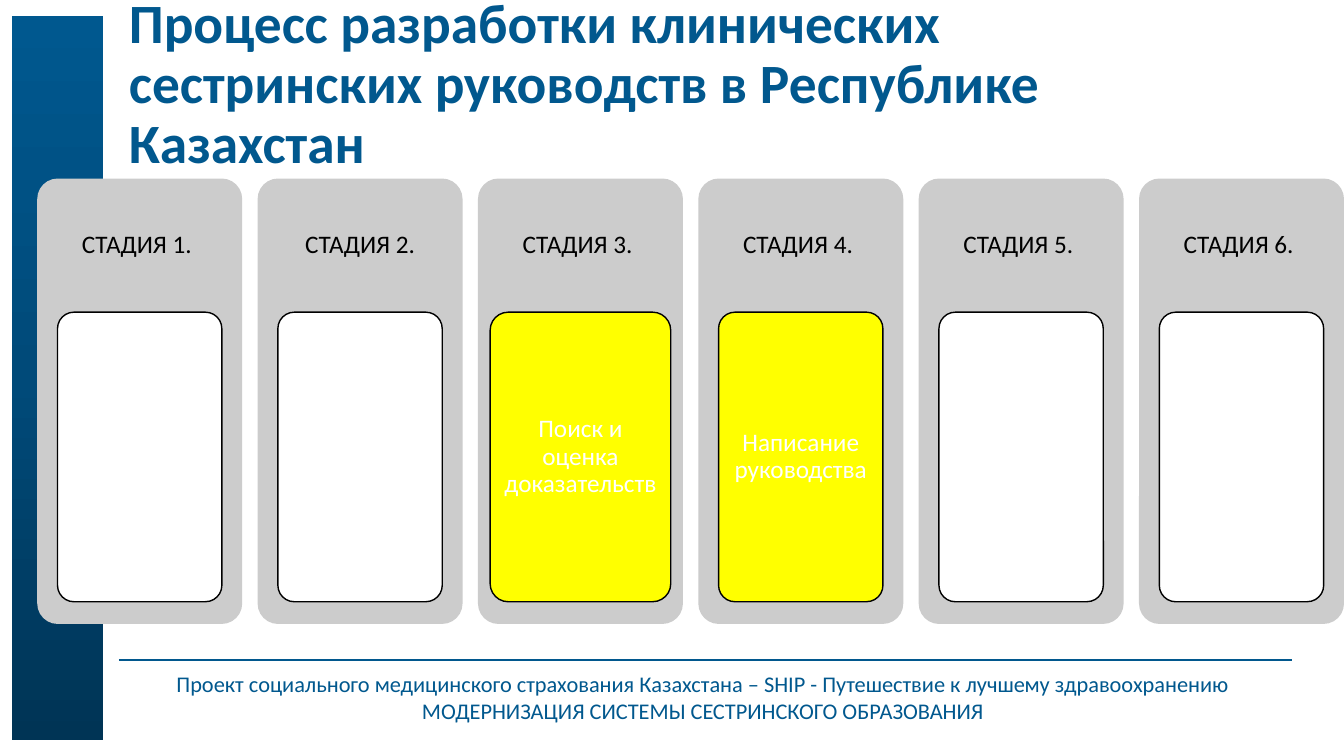
from copy import deepcopy

from pptx import Presentation
from pptx.dml.color import RGBColor
from pptx.enum.shapes import MSO_CONNECTOR, MSO_SHAPE
from pptx.enum.text import MSO_ANCHOR as Anchor, PP_ALIGN as Align
from pptx.oxml.ns import qn
from pptx.oxml.xmlchemy import OxmlElement
from pptx.util import Pt

COLORS = {
    "blue": "01588E", "band_bottom": "003455", "band_middle": "004A79", "band_top": "00588F",
    "panel": "CCCCCC", "white": "FFFFFF", "highlight": "FFFF00", "black": "000000",
}
FONT = "Calibri"
STAGES = [
    ("СТАДИЯ 1. ", "", "white", 117.4),
    ("СТАДИЯ 2.", "", "white", 117.4),
    ("СТАДИЯ 3. ", "Поиск и оценка доказательств", "highlight", 129),
    ("СТАДИЯ 4. ", "Написание руководства", "highlight", 117.4),
    ("СТАДИЯ 5. ", "", "white", 117.4),
    ("СТАДИЯ 6. ", "", "white", 117.4),
]


def rgb(name):
    """Return the named colour."""
    return RGBColor.from_string(COLORS[name])


def add_text(slide, box, text, size, color, align=Align.CENTER, anchor=Anchor.MIDDLE,
             insets=(7.2, 3.6), spacing=0.9, bold=False):
    """Add a wrapped one-paragraph text box."""
    frame = slide.shapes.add_textbox(*map(Pt, box)).text_frame
    frame.word_wrap = True
    frame.vertical_anchor = anchor
    frame.margin_left = frame.margin_right = Pt(insets[0])
    frame.margin_top = frame.margin_bottom = Pt(insets[1])
    frame.text = text
    paragraph = frame.paragraphs[0]
    paragraph.alignment = align
    paragraph.line_spacing = spacing
    for run in paragraph.runs:
        run.font.name = FONT
        run.font.size = Pt(size)
        run.font.bold = bold
        run.font.color.rgb = rgb(color)


def add_panel(slide, box, fill, line=None):
    """Add a rounded panel, outlined when a line colour is given."""
    shape = slide.shapes.add_shape(MSO_SHAPE.ROUNDED_RECTANGLE, *map(Pt, box))
    shape.shadow.inherit = False
    shape.adjustments[0] = 0.1
    shape.fill.solid()
    shape.fill.fore_color.rgb = rgb(fill)
    if line:
        shape.line.color.rgb = rgb(line)
        shape.line.width = Pt(1)
    else:
        shape.line.fill.background()


def add_side_band(slide, box):
    """Add the vertical gradient band."""
    shape = slide.shapes.add_shape(MSO_SHAPE.RECTANGLE, *map(Pt, box))
    shape.shadow.inherit = False
    shape.line.color.rgb = rgb("white")
    shape.line.width = Pt(1)
    shape.fill.gradient()
    shape.fill.gradient_angle = 90
    stop_list = shape._element.spPr.find(qn("a:gradFill")).find(qn("a:gsLst"))
    stop_list.insert(1, deepcopy(stop_list[0]))
    names = ("band_bottom", "band_middle", "band_top")
    for index, (stop, name) in enumerate(zip(shape.fill.gradient_stops, names)):
        stop.position = index / 2
        stop.color.rgb = rgb(name)


def add_footer(slide, box):
    """Add the rule and the two centred project lines."""
    left, top, width, height = box
    rule = slide.shapes.add_connector(
        MSO_CONNECTOR.STRAIGHT, Pt(left + 3), Pt(top), Pt(left + 841), Pt(top))
    rule.line.color.rgb = rgb("blue")
    rule.line.width = Pt(1.5)
    rule._element.spPr.append(OxmlElement("a:effectLst"))
    text = ("Проект социального медицинского страхования Казахстана – SHIP - "
            "Путешествие к лучшему здравоохранению\vМОДЕРНИЗАЦИЯ СИСТЕМЫ СЕСТРИНСКОГО ОБРАЗОВАНИЯ")
    add_text(slide, (left, top + 3.6, width, height - 3.6), text, 16, "blue",
             anchor=Anchor.TOP, spacing=1.0)


def add_stage(slide, box, label, task, fill, card_width):
    """Add one stage column: panel, heading and inner card."""
    left, top, width, height = box
    heading_height = height * 0.3
    card = (left + (width - card_width) / 2, top + heading_height, card_width, height * 0.65)
    add_panel(slide, box, "panel")
    add_text(slide, (left, top, width, heading_height), label, 18, "black", insets=(5, 5))
    add_panel(slide, card, fill, "black")
    if task:
        inner = (card[0] + 3.6, card[1] + 3.6, card[2] - 7.2, card[3] - 7.2)
        add_text(slide, inner, task, 18, "white", insets=(3.6, 2.7))


def add_stages(slide, box, gap):
    """Spread the stage columns evenly over the box."""
    left, top, width, height = box
    column = (width - gap * (len(STAGES) - 1)) / len(STAGES)
    for index, stage in enumerate(STAGES):
        add_stage(slide, (left + index * (column + gap), top, column, height), *stage)


def main():
    """Build and save the slide."""
    presentation = Presentation()
    presentation.slide_width, presentation.slide_height = Pt(960), Pt(540)
    slide = presentation.slides.add_slide(presentation.slide_layouts[6])
    add_side_band(slide, (8, 10.8, 66.3, 518.4))
    add_footer(slide, (82, 471.6, 840.2, 49.7))
    add_text(slide, (85, 28.8, 809.3, 64.8),
             "Процесс разработки клинических сестринских руководств в Республике Казахстан",
             39.6, "blue", align=Align.LEFT, bold=True)
    add_stages(slide, (26.6, 127.5, 933.4, 318.2), 11)
    presentation.save("out.pptx")


if __name__ == "__main__":
    main()
